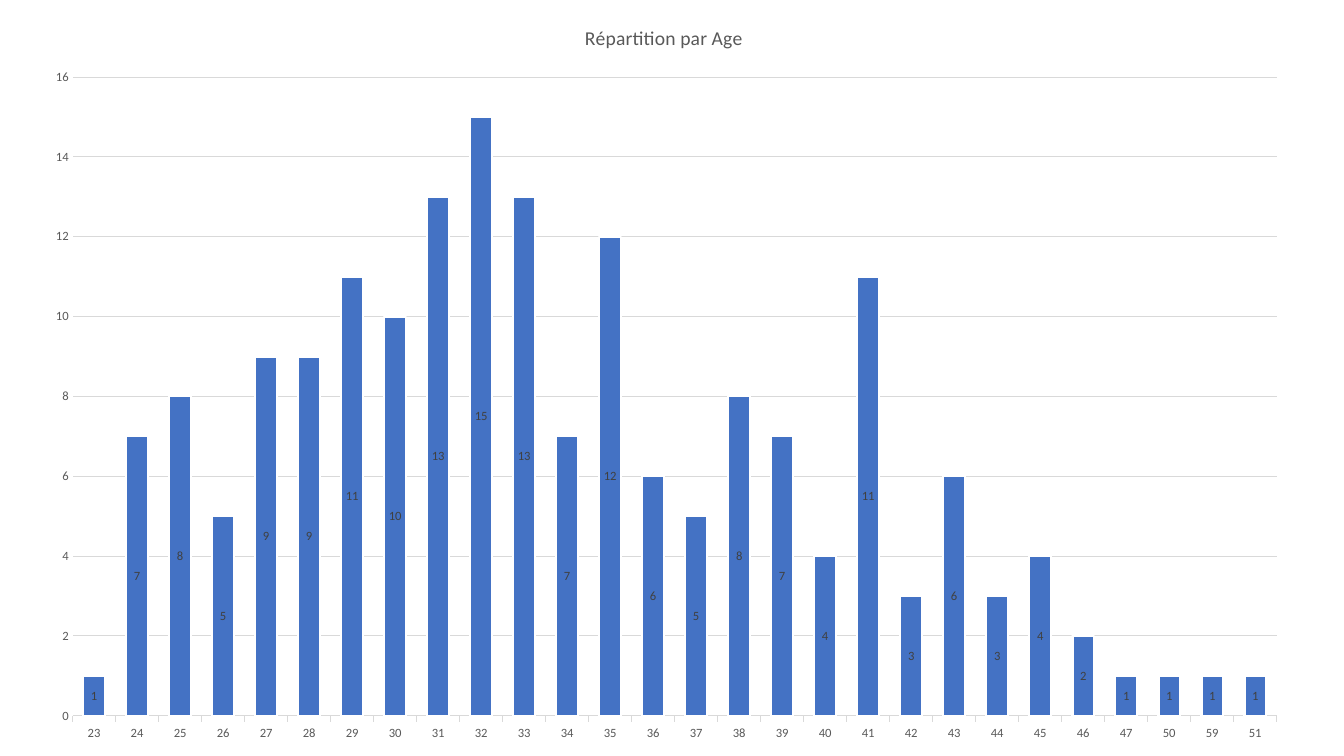
from lxml import etree
from pptx import Presentation
from pptx.chart.data import CategoryChartData
from pptx.dml.color import RGBColor
from pptx.enum.chart import XL_CHART_TYPE, XL_LABEL_POSITION, XL_TICK_MARK
from pptx.oxml.ns import qn
from pptx.util import Cm, Pt

COLUMNS = XL_CHART_TYPE.COLUMN_CLUSTERED
CENTER = XL_LABEL_POSITION.CENTER
TICK_OUTSIDE = XL_TICK_MARK.OUTSIDE
TICK_NONE = XL_TICK_MARK.NONE

FONT = "Calibri"
BLUE, WHITE = "4472C4", "FFFFFF"
GREY, DARK_GREY, LIGHT_GREY = "595959", "404040", "D9D9D9"

AGES = [*range(23, 48), 50, 59, 51]
COUNTS = [1, 7, 8, 5, 9, 9, 11, 10, 13, 15, 13, 7, 12, 6,
          5, 8, 7, 4, 11, 3, 6, 3, 4, 2, 1, 1, 1, 1]


def rgb(color):
    return RGBColor.from_string(color)


def set_font(font, size, color):
    font.name = FONT
    font.size = Pt(size)
    font.bold = False
    font.color.rgb = rgb(color)


def set_line(line, color, width):
    line.color.rgb = rgb(color)
    line.width = Pt(width)


def add_title(chart, text):
    chart.has_title = True
    tf = chart.chart_title.text_frame
    tf.text = text
    set_font(tf.paragraphs[0].runs[0].font, 14, GREY)
    chart.chart_title.include_in_layout = False


def set_plot_area(chart, x, y, w, h):
    area = chart.plots[0]._element.getparent()
    for old in area.findall(qn("c:layout")):
        area.remove(old)
    layout = etree.Element(qn("c:layout"))
    manual = etree.SubElement(layout, qn("c:manualLayout"))
    settings = [("layoutTarget", "inner"), ("xMode", "edge"), ("yMode", "edge"),
                ("x", x), ("y", y), ("w", w), ("h", h)]
    for tag, value in settings:
        etree.SubElement(manual, qn(f"c:{tag}")).set("val", str(value))
    area.insert(0, layout)


def style_axes(chart):
    ages, counts = chart.category_axis, chart.value_axis
    for axis in (ages, counts):
        set_font(axis.tick_labels.font, 9, GREY)
        axis.minor_tick_mark = TICK_NONE
    ages.major_tick_mark = TICK_OUTSIDE
    set_line(ages.format.line, LIGHT_GREY, 0.75)
    counts.major_tick_mark = TICK_NONE
    counts.minimum_scale = 0
    counts.maximum_scale = 16
    counts.major_unit = 2
    counts.format.line.fill.background()
    counts.has_major_gridlines = True
    set_line(counts.major_gridlines.format.line, LIGHT_GREY, 0.75)


def style_columns(plot):
    plot.gap_width = 100
    plot.vary_by_categories = False
    series = plot.series[0]
    series.format.fill.solid()
    series.format.fill.fore_color.rgb = rgb(BLUE)
    set_line(series.format.line, WHITE, 1.5)
    labels = series.data_labels
    labels.show_value = True
    labels.position = CENTER
    set_font(labels.font, 9, DARK_GREY)


def add_age_chart(slide):
    data = CategoryChartData()
    data.categories = [str(age) for age in AGES]
    data.add_series("Series 1", COUNTS)
    frame = slide.shapes.add_chart(
        COLUMNS, Cm(0.64), Cm(0), Cm(32.18), Cm(19.05), data)
    chart = frame.chart
    set_font(chart.font, 10, "000000")
    chart.has_legend = False
    add_title(chart, "Répartition par Age")
    set_plot_area(chart, 0.037, 0.102, 0.943, 0.845)
    style_axes(chart)
    style_columns(chart.plots[0])


def main():
    prs = Presentation()
    prs.slide_width = Cm(33.87)
    prs.slide_height = Cm(19.05)
    slide = prs.slides.add_slide(prs.slide_layouts[6])
    add_age_chart(slide)
    prs.save("out.pptx")


if __name__ == "__main__":
    main()
